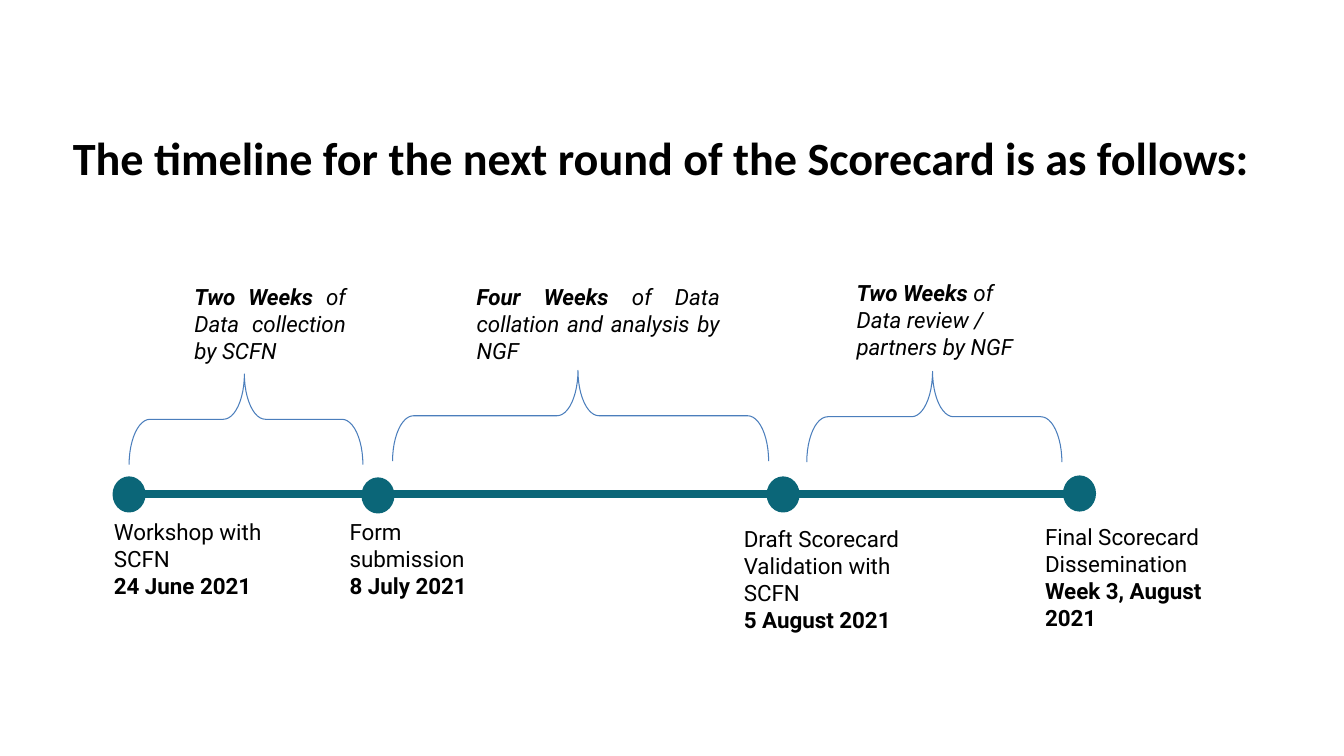
from dataclasses import dataclass

from lxml import etree
from pptx import Presentation
from pptx.dml.color import RGBColor
from pptx.enum.shapes import MSO_CONNECTOR, MSO_SHAPE
from pptx.enum.text import MSO_ANCHOR, PP_ALIGN
from pptx.oxml.ns import qn
from pptx.util import Pt

OVAL, BRACE = MSO_SHAPE.OVAL, MSO_SHAPE.LEFT_BRACE
STRAIGHT = MSO_CONNECTOR.STRAIGHT
TOP = MSO_ANCHOR.TOP
LEFT, CENTER, JUSTIFY = PP_ALIGN.LEFT, PP_ALIGN.CENTER, PP_ALIGN.JUSTIFY


@dataclass(frozen=True)
class Theme:
    ink: RGBColor = RGBColor(0x00, 0x00, 0x00)
    teal: RGBColor = RGBColor(0x0B, 0x66, 0x78)
    blue: RGBColor = RGBColor(0x4B, 0x7E, 0xBC)
    head: str = "Calibri"
    body: str = "Roboto"
    big: int = 33
    small: int = 16


theme = Theme()

deck = Presentation()
deck.slide_width, deck.slide_height = Pt(960), Pt(540)
slide = deck.slides.add_slide(deck.slide_layouts[6])
shapes = slide.shapes


def add_text(left, top, width, height, paras, align=LEFT,
             face=theme.body, size=theme.small, slant=False):
    """Add a text box; each paragraph is a list of (text, bold) runs."""
    box = shapes.add_textbox(Pt(left), Pt(top), Pt(width), Pt(height))
    frame = box.text_frame
    frame.word_wrap = True
    frame.vertical_anchor = TOP
    for i, runs in enumerate(paras):
        para = frame.add_paragraph() if i else frame.paragraphs[0]
        para.alignment = align
        for text, bold in runs:
            run = para.add_run()
            run.text = text
            font = run.font
            font.name, font.size = face, Pt(size)
            font.bold, font.italic = bold, slant
            font.color.rgb = theme.ink


# Title
title = "The timeline for the next round of the Scorecard is as follows:"
add_text(40.3, 88.6, 864, 90, [[(title, True)]], CENTER, theme.head, theme.big)

# Time axis
axis = shapes.add_connector(STRAIGHT, Pt(81.4), Pt(352.8), Pt(781.9), Pt(352.8))
axis.line.color.rgb = theme.teal
axis.line.width = Pt(6)
etree.SubElement(axis._element.spPr, qn("a:effectLst"))

# Milestones: dot left and top, label left, top and width, event, date
stones = [
    (81.4, 341.3, 74.2, 366.5, 128.9, "Workshop with SCFN", "24 June 2021"),
    (259.2, 342, 242.6, 366.5, 128.9, "Form submission", "8 July 2021"),
    (548.6, 341.3, 524.2, 371.5, 156.2,
     "Draft Scorecard Validation with SCFN", "5 August 2021"),
    (760.3, 340.6, 739.4, 370.1, 164.9,
     "Final Scorecard Dissemination", "Week 3, August 2021"),
]
for dot_x, dot_y, left, top, width, event, date in stones:
    dot = shapes.add_shape(OVAL, Pt(dot_x), Pt(dot_y), Pt(21.6), Pt(23.8))
    dot.shadow.inherit = False
    dot.fill.solid()
    dot.fill.fore_color.rgb = theme.teal
    dot.line.color.rgb = theme.teal
    dot.line.width = Pt(2)
    add_text(left, top, width, 65.5, [[(event, False)], [(date, True)]])

# Phases: note left, top, width and alignment, brace centre and span, text
phases = [
    (131.8, 198.7, 122.4, JUSTIFY, 175.7, 299.5, 167,
     "Two Weeks ", "of Data collection by SCFN"),
    (333.4, 198.7, 187.9, JUSTIFY, 414.7, 297, 268.6,
     "Four Weeks ", "of Data collation and analysis by NGF"),
    (604.8, 195.8, 136.8, LEFT, 667.4, 297.7, 182.2,
     "Two Weeks ", "of Data review / partners by NGF"),
]
depth = 64.8
for left, top, width, align, mid_x, mid_y, span, time, task in phases:
    add_text(left, top, width, 65.5, [[(time, True), (task, False)]],
             align, slant=True)
    brace = shapes.add_shape(BRACE, Pt(mid_x - depth / 2), Pt(mid_y - span / 2),
                             Pt(depth), Pt(span))
    brace.rotation = 90
    brace.adjustments[0] = 0.231
    brace.adjustments[1] = 0.507
    brace.shadow.inherit = False
    brace.fill.background()
    brace.line.color.rgb = theme.blue
    brace.line.width = Pt(0.75)

deck.save("out.pptx")
